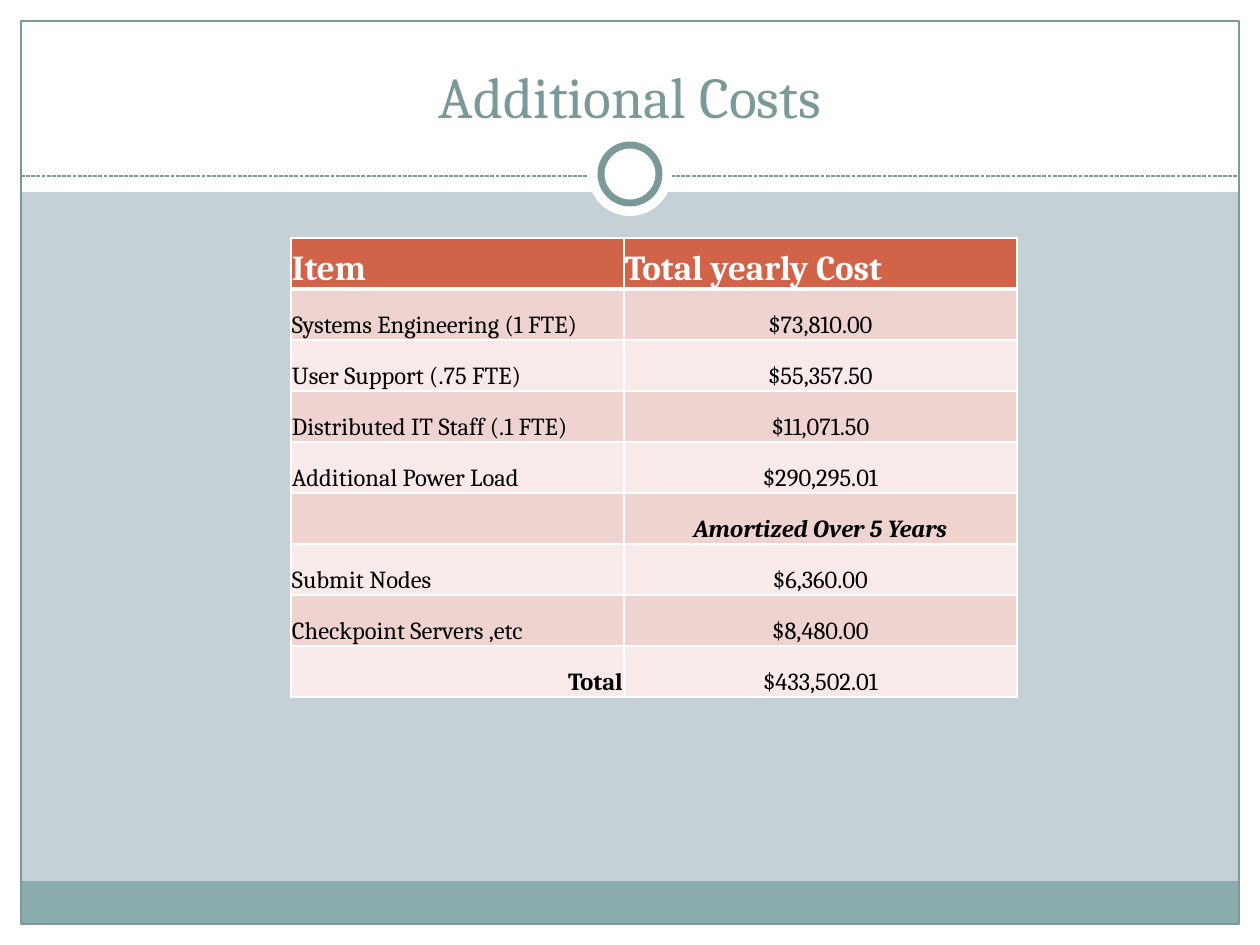
from dataclasses import dataclass

from lxml import etree
from pptx import Presentation
from pptx.dml.color import RGBColor
from pptx.enum.dml import MSO_LINE
from pptx.enum.shapes import MSO_CONNECTOR, MSO_SHAPE
from pptx.enum.text import MSO_ANCHOR, PP_ALIGN
from pptx.oxml.ns import qn
from pptx.util import Emu, Pt

RECTANGLE, ELLIPSE = MSO_SHAPE.RECTANGLE, MSO_SHAPE.OVAL
STRAIGHT, DASH = MSO_CONNECTOR.STRAIGHT, MSO_LINE.SQUARE_DOT
LEFT, CENTER, RIGHT = PP_ALIGN.LEFT, PP_ALIGN.CENTER, PP_ALIGN.RIGHT
BOTTOM = MSO_ANCHOR.BOTTOM

EMU_PER_PX = 914400 / 126
WIDTH, HEIGHT, MARGIN = 1260, 945, 21

HEADINGS = ("Item", "Total yearly Cost")
COSTS = (
    ("Systems Engineering (1 FTE)", "$73,810.00"),
    ("User Support (.75 FTE)", "$55,357.50"),
    ("Distributed IT Staff (.1 FTE)", "$11,071.50"),
    ("Additional Power Load", "$290,295.01"),
    ("", "Amortized Over 5 Years"),
    ("Submit Nodes", "$6,360.00"),
    ("Checkpoint Servers ,etc", "$8,480.00"),
    ("Total", "$433,502.01"),
)
EMPHASIS = {
    "Amortized Over 5 Years": {"bold": True, "italic": True},
    "Total": {"bold": True, "align": RIGHT},
}


@dataclass(frozen=True)
class Theme:
    font: str = "Cambria"
    background: str = "C5D1D7"
    white: str = "FFFFFF"
    black: str = "000000"
    accent: str = "7C999A"
    footer: str = "8CADAE"
    header: str = "D16349"
    bands: tuple = ("EED3D0", "F7EAE9")
    title_size: int = 33
    header_size: int = 20
    body_size: int = 14


def px(length):
    return Emu(round(length * EMU_PER_PX))


def rgb(value):
    return RGBColor.from_string(value)


def write_text(frame, text, *, font, size, color, align=LEFT, bold=False, italic=False):
    paragraph = frame.paragraphs[0]
    paragraph.alignment = align
    run = paragraph.add_run()
    run.text = text
    run.font.name, run.font.size = font, Pt(size)
    run.font.bold, run.font.italic = bold, italic
    run.font.color.rgb = rgb(color)


class SlideBuilder:
    def __init__(self, slide, theme):
        self.slide = slide
        self.theme = theme

    def background(self, color):
        self.slide.background.fill.solid()
        self.slide.background.fill.fore_color.rgb = rgb(color)

    def shape(self, kind, box, fill=None, line=None, line_width=0.75):
        shape = self.slide.shapes.add_shape(kind, *map(px, box))
        shape.shadow.inherit = False
        if fill:
            shape.fill.solid()
            shape.fill.fore_color.rgb = rgb(fill)
        else:
            shape.fill.background()
        if line:
            shape.line.color.rgb = rgb(line)
            shape.line.width = Pt(line_width)
        else:
            shape.line.fill.background()

    def dashed_line(self, start, end, color):
        connector = self.slide.shapes.add_connector(STRAIGHT, *map(px, start + end))
        connector.line.color.rgb = rgb(color)
        connector.line.width = Pt(0.75)
        connector.line.dash_style = DASH
        etree.SubElement(connector._element.spPr, qn("a:effectLst"))

    def text(self, box, text, **text_format):
        frame = self.slide.shapes.add_textbox(*map(px, box)).text_frame
        frame.word_wrap = True
        frame.vertical_anchor = BOTTOM
        write_text(frame, text, font=self.theme.font, **text_format)

    def cell(self, cell, text, fill, top=1, bottom=1, **text_format):
        cell.margin_left = cell.margin_right = cell.margin_top = px(1)
        cell.margin_bottom = 0
        cell.vertical_anchor = BOTTOM
        # Borders come before the fill in the cell properties
        properties = cell._tc.get_or_add_tcPr()
        for side, width in (("L", 1), ("R", 1), ("T", top), ("B", bottom)):
            border = etree.SubElement(properties, qn(f"a:ln{side}"), w=str(int(Pt(width))))
            solid = etree.SubElement(border, qn("a:solidFill"))
            etree.SubElement(solid, qn("a:srgbClr"), val=self.theme.white)
        cell.fill.solid()
        cell.fill.fore_color.rgb = rgb(fill)
        if text:
            write_text(cell.text_frame, text, font=self.theme.font, **text_format)

    def table(self, left, top, column_widths, row_height, headings, rows):
        theme = self.theme
        count = len(rows) + 1
        box = (left, top, sum(column_widths), row_height * count)
        table = self.slide.shapes.add_table(count, len(headings), *map(px, box)).table
        table.first_row = table.horz_banding = False
        for column, width in zip(table.columns, column_widths):
            column.width = px(width)
        for row in table.rows:
            row.height = px(row_height)
        for index, heading in enumerate(headings):
            self.cell(table.cell(0, index), heading, theme.header, bottom=3,
                      size=theme.header_size, color=theme.white, bold=True)
        for number, row in enumerate(rows):
            for index, text in enumerate(row):
                text_format = {"align": CENTER if index else LEFT, **EMPHASIS.get(text, {})}
                self.cell(table.cell(number + 1, index), text, theme.bands[number % 2],
                          top=1 if number else 3, size=theme.body_size,
                          color=theme.black, **text_format)


def main():
    theme = Theme()
    presentation = Presentation()
    presentation.slide_width, presentation.slide_height = px(WIDTH), px(HEIGHT)
    builder = SlideBuilder(presentation.slides.add_slide(presentation.slide_layouts[6]), theme)
    builder.background(theme.background)

    # White margins and title band
    for box in (
        (0, HEIGHT - MARGIN, WIDTH, MARGIN),
        (0, 0, WIDTH, 192),
        (0, 0, MARGIN, HEIGHT),
        (WIDTH - MARGIN, 0, MARGIN, HEIGHT),
    ):
        builder.shape(RECTANGLE, box, fill=theme.white)

    # Footer band, frame and divider
    inner_width = WIDTH - 2 * MARGIN
    builder.shape(RECTANGLE, (MARGIN, 881, inner_width, 43), fill=theme.footer)
    builder.shape(RECTANGLE, (MARGIN, MARGIN, inner_width, HEIGHT - 2 * MARGIN),
                  line=theme.accent)
    builder.dashed_line((MARGIN, 176), (WIDTH - MARGIN, 176), theme.accent)

    # Ring on the divider
    builder.shape(ELLIPSE, (588, 132, 84, 84), fill=theme.white)
    builder.shape(ELLIPSE, (601, 145, 58, 58), fill=theme.white,
                  line=theme.accent, line_width=4)

    # Title and cost table
    builder.text((42, 32, 1176, 104), "Additional Costs", size=theme.title_size,
                 color=theme.accent, align=CENTER)
    builder.table(291, 238, (333, 393), 51, HEADINGS, COSTS)

    presentation.save("out.pptx")


if __name__ == "__main__":
    main()
